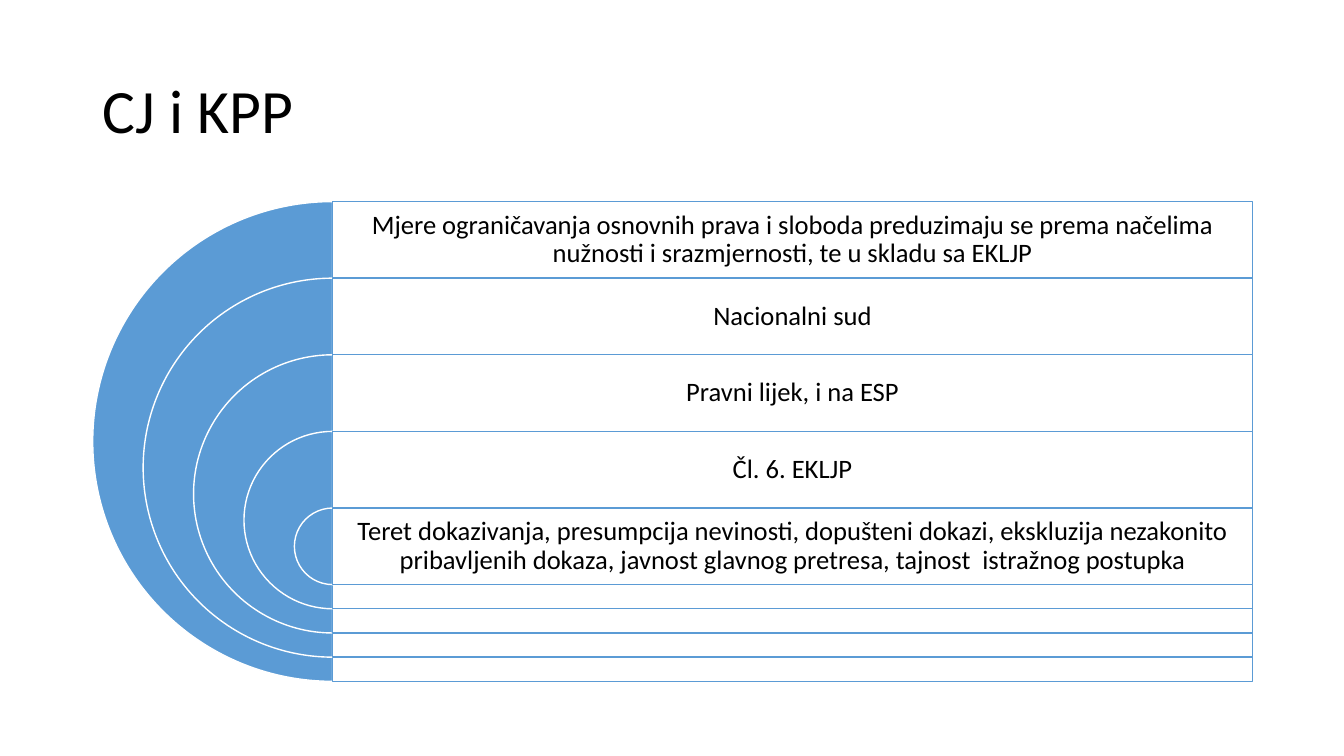
import dataclasses

import lxml.etree
import pptx
import pptx.dml.color
import pptx.enum.shapes
import pptx.enum.text
import pptx.oxml.ns
import pptx.util

Inches = pptx.util.Inches
RGBColor = pptx.dml.color.RGBColor
Shape = pptx.enum.shapes.MSO_SHAPE
Align = pptx.enum.text.PP_ALIGN


@dataclasses.dataclass(frozen=True)
class Theme:
    font: str = "Calibri"
    title_size: int = 44
    label_size: int = 19
    line_width: int = 1
    ink: RGBColor = RGBColor(0x00, 0x00, 0x00)
    accent: RGBColor = RGBColor(0x5B, 0x9B, 0xD5)
    paper: RGBColor = RGBColor(0xFF, 0xFF, 0xFF)


class SlideBuilder:
    def __init__(self, page, theme):
        self.page = page
        self.theme = theme

    def text(self, words, left, top, width, height, size, align, inset=None):
        box = self.page.shapes.add_textbox(
            Inches(left), Inches(top), Inches(width), Inches(height))
        frame = box.text_frame
        frame.word_wrap = True
        frame.vertical_anchor = pptx.enum.text.MSO_ANCHOR.MIDDLE
        if inset is not None:
            frame.margin_left = frame.margin_right = Inches(inset)
            frame.margin_top = frame.margin_bottom = Inches(inset)
        para = frame.paragraphs[0]
        para.text = words
        para.alignment = align
        para.line_spacing = 0.9
        para.font.name = self.theme.font
        para.font.size = pptx.util.Pt(size)
        para.font.color.rgb = self.theme.ink

    def shape(self, kind, left, top, width, height, fill, line):
        shape = self.page.shapes.add_shape(
            kind, Inches(left), Inches(top), Inches(width), Inches(height))
        shape.shadow.inherit = False
        shape.fill.solid()
        shape.fill.fore_color.rgb = fill
        shape.line.color.rgb = line
        shape.line.width = pptx.util.Pt(self.theme.line_width)
        return shape

    def half_disc(self, center, top, diameter):
        disc = self.shape(Shape.PIE, center - diameter / 2, top, diameter, diameter,
                          self.theme.accent, self.theme.paper)
        disc.adjustments[0] = 54
        disc.adjustments[1] = 162

    def panel(self, left, top, width, height):
        panel = self.shape(Shape.RECTANGLE, left, top, width, height,
                           self.theme.paper, self.theme.accent)
        qn = pptx.oxml.ns.qn
        color = panel.fill._xPr.find(qn("a:solidFill")).find(qn("a:srgbClr"))
        lxml.etree.SubElement(color, qn("a:alpha"), val="90000")


LABELS = [
    "Mjere ograničavanja osnovnih prava i sloboda preduzimaju se prema načelima "
    "nužnosti i srazmjernosti, te u skladu sa EKLJP",
    "Nacionalni sud",
    "Pravni lijek, i na ESP",
    "Čl. 6. EKLJP",
    "Teret dokazivanja, presumpcija nevinosti, dopušteni dokazi, ekskluzija nezakonito "
    "pribavljenih dokaza, javnost glavnog pretresa, tajnost  istražnog postupka",
]
CENTER, FIRST_TOP, ROW_HEIGHT = 3.3, 2, 0.76
PANEL_WIDTH, LARGEST_DIAMETER, DIAMETER_STEP = 9.12, 4.76, 1


def main():
    deck = pptx.Presentation()
    deck.slide_width = Inches(13.33)
    deck.slide_height = Inches(7.5)
    theme = Theme()
    builder = SlideBuilder(deck.slides.add_slide(deck.slide_layouts[6]), theme)
    builder.text("CJ i KPP", 0.92, 0.4, 11.5, 1.45, theme.title_size, Align.LEFT)
    for level, label in enumerate(LABELS):
        top = FIRST_TOP + level * ROW_HEIGHT
        diameter = LARGEST_DIAMETER - level * DIAMETER_STEP
        builder.half_disc(CENTER, top, diameter)
        builder.panel(CENTER, top, PANEL_WIDTH, diameter)
        builder.text(label, CENTER, top, PANEL_WIDTH, ROW_HEIGHT,
                     theme.label_size, Align.CENTER, inset=0.08)
    deck.save("out.pptx")


if __name__ == "__main__":
    main()
